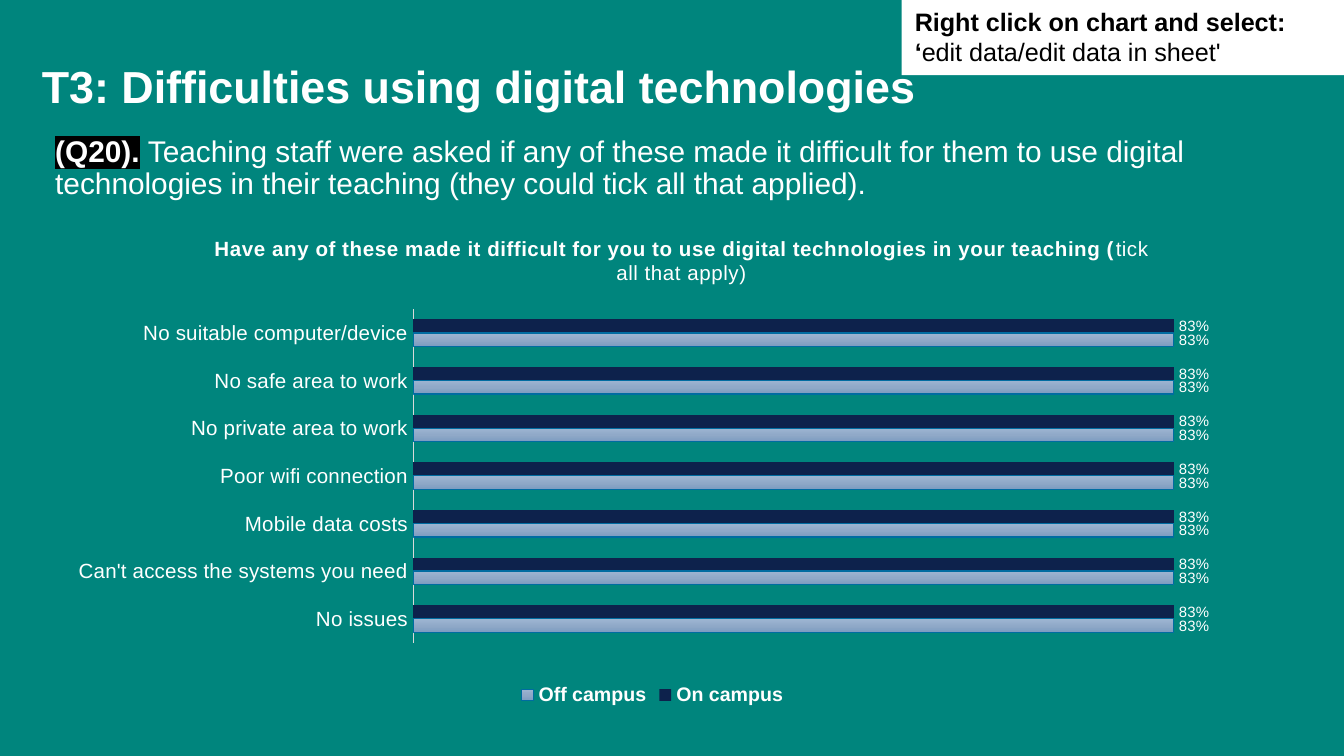
from copy import deepcopy

from pptx import Presentation
from pptx.chart.data import CategoryChartData
from pptx.dml.color import RGBColor
from pptx.enum.chart import XL_CHART_TYPE, XL_LABEL_POSITION, XL_LEGEND_POSITION, XL_TICK_MARK
from pptx.enum.shapes import MSO_SHAPE
from pptx.enum.text import MSO_ANCHOR, MSO_AUTO_SIZE, PP_ALIGN
from pptx.oxml import parse_xml
from pptx.oxml.ns import nsdecls, qn
from pptx.util import Cm, Pt

COLORS = {
    "teal": "00857D",
    "white": "FFFFFF",
    "black": "000000",
    "navy": "0D224C",
    "blue_line": "006CA1",
    "axis": "D9D9D9",
}
OFF_CAMPUS_STOPS = [(0, "9DB5D2"), (0.5, "90A9C8"), (1, "7C9CC0")]
DIFFICULTIES = [
    "No suitable computer/device",
    "No safe area to work",
    "No private area to work",
    "Poor wifi connection",
    "Mobile data costs",
    "Can't access the systems you need",
    "No issues",
]


def rgb(name):
    return RGBColor.from_string(COLORS[name])


def set_font(font, size, color, bold=None):
    font.name = "Arial"
    font.size = Pt(size)
    font.color.rgb = rgb(color)
    font.bold = bold


def place(shape, left, top, width, height):
    shape.left, shape.top = Cm(left), Cm(top)
    shape.width, shape.height = Cm(width), Cm(height)


def add_runs(paragraph, *parts):
    """Add (text, bold) parts and return their runs."""
    runs = []
    for text, bold in parts:
        run = paragraph.add_run()
        run.text = text
        run.font.bold = bold
        runs.append(run)
    return runs


def set_title(slide):
    heading = slide.shapes.title
    place(heading, 0.79, 1.14, 18.11, 0.94)
    frame = heading.text_frame
    frame.text = "T3: Difficulties using digital technologies"
    frame.margin_left = frame.margin_right = frame.margin_top = frame.margin_bottom = 0
    frame.vertical_anchor = MSO_ANCHOR.MIDDLE
    frame.auto_size = MSO_AUTO_SIZE.NONE
    frame.word_wrap = True
    frame.paragraphs[0].alignment = PP_ALIGN.LEFT
    set_font(frame.paragraphs[0].font, 24, "white", True)


def set_question(slide):
    question = slide.placeholders[1]
    place(question, 0.79, 2.46, 22.83, 1.55)
    frame = question.text_frame
    frame.auto_size = MSO_AUTO_SIZE.NONE
    frame.vertical_anchor = MSO_ANCHOR.TOP
    paragraph = frame.paragraphs[0]
    properties = paragraph._p.get_or_add_pPr()
    properties.set("marL", "0")
    properties.set("indent", "0")
    properties.append(parse_xml(f"<a:buNone {nsdecls('a')}/>"))
    paragraph.line_spacing = 0.9
    paragraph.space_before = Pt(0)
    set_font(paragraph.font, 16, "white")
    number = add_runs(
        paragraph,
        ("(Q20).", True),
        (" ", True),
        ("Teaching staff were asked if any of these made it difficult for them to use digital "
         "technologies in their teaching (they could tick all that applied).", False),
    )[0]
    number._r.get_or_add_rPr().append(parse_xml(
        f"<a:highlight {nsdecls('a')}><a:srgbClr val=\"{COLORS['black']}\"/></a:highlight>"))


def set_layout(parent, index, target="", **fractions):
    """Give a chart part a manual layout in fractions of the chart."""
    for old in parent.findall(qn("c:layout")):
        parent.remove(old)
    modes = "".join(f'<c:{axis}Mode val="edge"/>' for axis in "xy")
    values = "".join(f'<c:{key} val="{value}"/>' for key, value in fractions.items())
    parent.insert(index, parse_xml(
        f"<c:layout {nsdecls('c')}><c:manualLayout>{target}{modes}{values}"
        "</c:manualLayout></c:layout>"))


def fill_gradient(series, stops):
    fill = series.format.fill
    fill.gradient()
    fill.gradient_angle = 270
    stop_list = series._element.find(".//" + qn("a:gsLst"))
    stop_list.append(deepcopy(stop_list[-1]))
    for stop, (position, color) in zip(fill.gradient_stops, stops):
        stop.position = position
        stop.color.rgb = RGBColor.from_string(color)


def label_series(series):
    labels = series.data_labels
    labels.show_value = True
    labels.number_format = "0%"
    labels.number_format_is_linked = False
    labels.position = XL_LABEL_POSITION.OUTSIDE_END
    set_font(labels.font, 8, "white")


def set_chart_title(chart):
    frame = chart.chart_title.text_frame
    paragraph = frame.paragraphs[0]
    set_font(paragraph.font, 11, "white")
    runs = add_runs(
        paragraph,
        ("Have any of these made it difficult for you to use digital technologies "
         "in your teaching (", True),
        ("tick all that apply)", False),
    )
    for run in runs:
        set_font(run.font, 11, "white", run.font.bold)
        run._r.get_or_add_rPr().set("spc", "20")
    set_layout(chart.chart_title._element, 1, x=0.13, y=0.02)


def add_difficulties_chart(slide):
    data = CategoryChartData(number_format="0%")
    data.categories = DIFFICULTIES
    for place_of_work in ("On campus", "Off campus"):
        data.add_series(place_of_work, [0.83] * len(DIFFICULTIES))
    chart = slide.shapes.add_chart(XL_CHART_TYPE.BAR_CLUSTERED, Cm(1.04), Cm(4.17),
                                   Cm(22.58), Cm(9.27), data).chart
    set_font(chart.font, 10, "black")
    set_chart_title(chart)

    # Bars
    plot = chart.plots[0]
    plot.gap_width = 150
    plot.overlap = 0
    plot.vary_by_categories = False
    set_layout(chart._chartSpace.chart.plotArea, 0, '<c:layoutTarget val="inner"/>',
               x=0.3, y=0.18, w=0.69, h=0.68)
    on_campus, off_campus = plot.series
    on_campus.format.fill.solid()
    on_campus.format.fill.fore_color.rgb = rgb("navy")
    fill_gradient(off_campus, OFF_CAMPUS_STOPS)
    off_campus.format.line.color.rgb = rgb("blue_line")
    off_campus.format.line.width = Pt(0.75)
    for series in plot.series:
        label_series(series)

    # Axes
    difficulties = chart.category_axis
    difficulties.reverse_order = True
    difficulties.major_tick_mark = XL_TICK_MARK.NONE
    difficulties.format.line.color.rgb = rgb("axis")
    difficulties.format.line.width = Pt(0.75)
    set_font(difficulties.tick_labels.font, 11, "white")
    share = chart.value_axis
    share.minimum_scale, share.maximum_scale = 0, 0.9
    share.has_major_gridlines = False
    share.visible = False

    # Legend
    chart.has_legend = True
    chart.legend.position = XL_LEGEND_POSITION.BOTTOM
    chart.legend.include_in_layout = False
    set_font(chart.legend.font, 10.5, "white", True)


def add_edit_hint(slide):
    hint = slide.shapes.add_shape(MSO_SHAPE.RECTANGLE, Cm(17.04), 0, Cm(8.36), Cm(1.42))
    hint.shadow.inherit = False
    hint.fill.solid()
    hint.fill.fore_color.rgb = rgb("white")
    hint.line.fill.background()
    frame = hint.text_frame
    frame.word_wrap = True
    frame.auto_size = MSO_AUTO_SIZE.SHAPE_TO_FIT_TEXT
    frame.vertical_anchor = MSO_ANCHOR.TOP
    paragraph = frame.paragraphs[0]
    paragraph.alignment = PP_ALIGN.LEFT
    set_font(paragraph.font, 13.5, "black")
    add_runs(paragraph, ("Right click on chart and select: ‘", True),
             ("edit data/edit data in sheet'", False))


def main():
    deck = Presentation()
    deck.slide_width, deck.slide_height = Cm(25.4), Cm(14.28)
    slide = deck.slides.add_slide(deck.slide_layouts[1])
    slide.background.fill.solid()
    slide.background.fill.fore_color.rgb = rgb("teal")
    set_title(slide)
    set_question(slide)
    add_difficulties_chart(slide)
    add_edit_hint(slide)
    deck.save("out.pptx")


if __name__ == "__main__":
    main()
